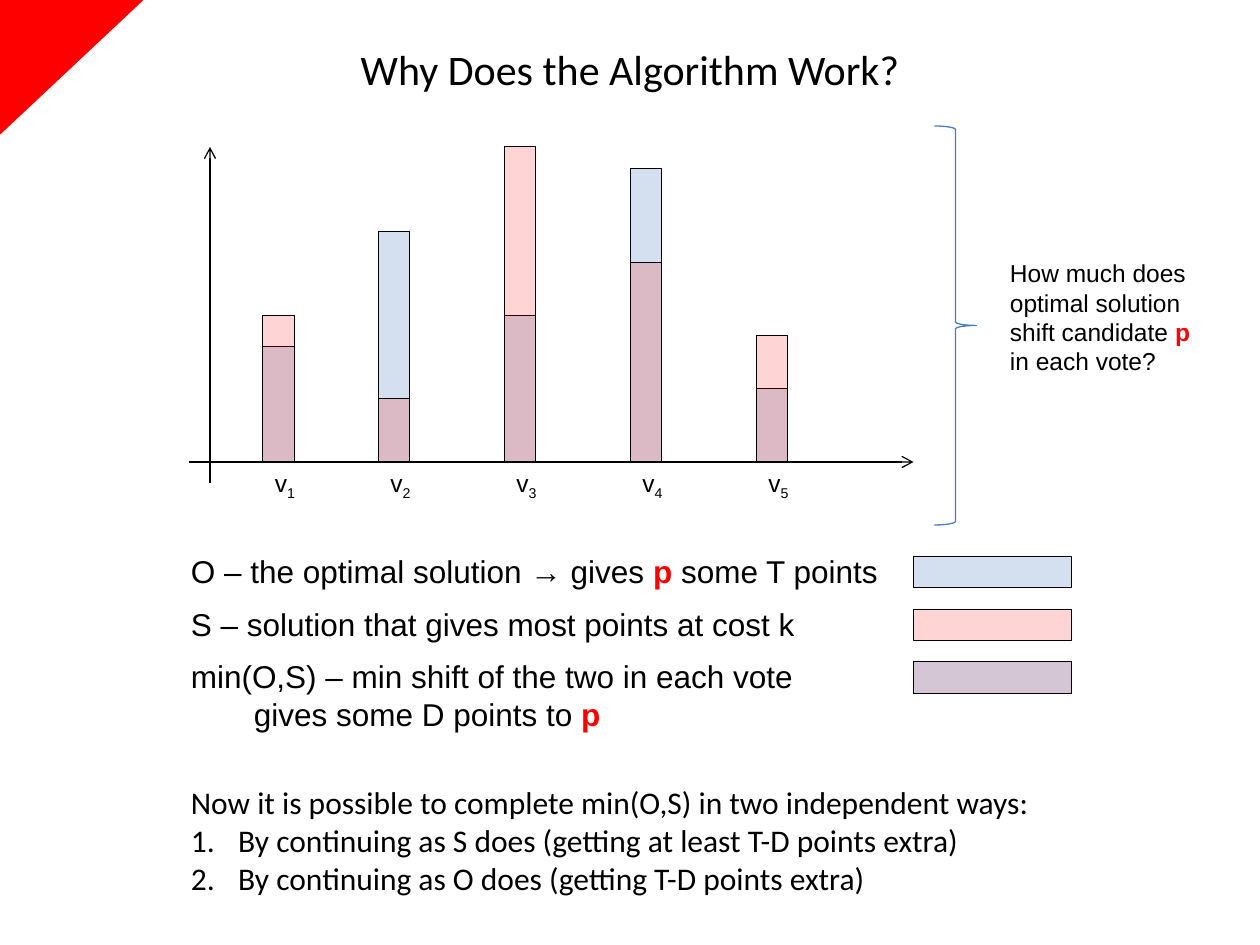
from lxml.etree import SubElement
from pptx import Presentation
from pptx.dml.color import RGBColor
from pptx.enum.shapes import MSO_CONNECTOR, MSO_SHAPE
from pptx.enum.text import MSO_ANCHOR, PP_ALIGN
from pptx.oxml.ns import qn
from pptx.util import Pt

BLACK, RED, BLUE = "000000", "FF0000", "95B3D7"
OPTIMAL = (BLUE, 40)
GREEDY = (RED, 17)
AXIS_Y = 264
BAR_WIDTH = 18
LEGEND_LEFT, LEGEND_TOP, LEGEND_STEP = 522, 318, 30
TEXT_LEFT = 102
VOTES = [(150, 66, 84), (216, 132, 36), (288, 84, 180), (360, 168, 114), (432, 42, 72)]


def paint(color_format, color):
    color_format.rgb = RGBColor.from_string(color)


def add_preset(slide, preset, left, top, width, height):
    shape = slide.shapes.add_shape(preset, Pt(left), Pt(top), Pt(width), Pt(height))
    shape.shadow.inherit = False
    return shape


def add_corner(slide):
    corner = add_preset(slide, MSO_SHAPE.RIGHT_TRIANGLE, 2.4, -2.4, 77, 82)
    corner.rotation = 90
    corner.fill.solid()
    paint(corner.fill.fore_color, RED)
    corner.line.fill.background()


def add_bar(slide, left, top, width, height, tint):
    color, opacity = tint
    bar = add_preset(slide, MSO_SHAPE.RECTANGLE, left, top, width, height)
    bar.fill.solid()
    paint(bar.fill.fore_color, color)
    srgb = bar.fill._xPr.find(".//" + qn("a:srgbClr"))
    SubElement(srgb, qn("a:alpha"), val=str(opacity * 1000))
    paint(bar.line.color, BLACK)
    bar.line.width = Pt(0.5)


def add_axis(slide, start, end):
    axis = slide.shapes.add_connector(
        MSO_CONNECTOR.STRAIGHT, *(Pt(value) for value in start + end))
    paint(axis.line.color, BLACK)
    axis.line.width = Pt(0.75)
    SubElement(axis.line._get_or_add_ln(), qn("a:tailEnd"), type="arrow")
    SubElement(axis._element.spPr, qn("a:effectLst"))


def add_brace(slide):
    brace = add_preset(slide, MSO_SHAPE.RIGHT_BRACE, 534, 72, 24, 228)
    brace.fill.background()
    paint(brace.line.color, "4B7EBC")
    brace.line.width = Pt(0.75)


def style(run, font, size, color=BLACK, bold=False):
    run.font.name = font
    run.font.size = Pt(size)
    run.font.bold = bold
    paint(run.font.color, color)


def add_text(slide, left, top, width, height, text, size, font="Arial", wrap=True):
    box = slide.shapes.add_textbox(Pt(left), Pt(top), Pt(width), Pt(height))
    frame = box.text_frame
    frame.word_wrap = wrap
    lines = text.split("\n")
    for index, line in enumerate(lines):
        paragraph = frame.add_paragraph() if index else frame.paragraphs[0]
        plain, *rest = line.split("*")
        paragraph.text = plain
        for run in paragraph.runs:
            style(run, font, size)
        for position, piece in enumerate(rest):
            if piece:
                run = paragraph.add_run()
                run.text = piece
                candidate = position % 2 == 0
                style(run, font, size, RED if candidate else BLACK, candidate)
    return frame


def add_title(slide):
    title = add_text(slide, 0, 0, 720, 78, "Why Does the Algorithm Work?", 24, "Calibri")
    title.vertical_anchor = MSO_ANCHOR.MIDDLE
    title.paragraphs[0].alignment = PP_ALIGN.CENTER


def add_vote_label(slide, left, number):
    paragraph = add_text(slide, left, AXIS_Y, 30, 24, "v", 14).paragraphs[0]
    subscript = paragraph.add_run()
    subscript.text = str(number)
    style(subscript, "Arial", 14)
    subscript._r.get_or_add_rPr().set("baseline", "-25000")


def number_paragraph(paragraph):
    properties = paragraph._p.get_or_add_pPr()
    properties.set("marL", str(Pt(27)))
    properties.set("indent", str(-Pt(27)))
    SubElement(properties, qn("a:buFont"), typeface="+mj-lt")
    SubElement(properties, qn("a:buAutoNum"), type="arabicPeriod")


def add_votes(slide):
    for left, optimal, _ in VOTES:
        add_bar(slide, left, AXIS_Y - optimal, BAR_WIDTH, optimal, OPTIMAL)
    for number, (left, _, greedy) in enumerate(VOTES, 1):
        add_bar(slide, left, AXIS_Y - greedy, BAR_WIDTH, greedy, GREEDY)
        add_vote_label(slide, left, number)


def add_legend(slide):
    entries = [
        ("O – the optimal solution → gives *p* some T points", 410, 29, False, [OPTIMAL]),
        ("S – solution that gives most points at cost k", 363, 29, False, [GREEDY]),
        ("min(O,S) – min shift of the two in each vote\v\tgives some D points to *p*",
         482, 51, True, [GREEDY, OPTIMAL]),
    ]
    for row, (text, width, height, wrap, tints) in enumerate(entries):
        top = LEGEND_TOP + row * LEGEND_STEP
        add_text(slide, TEXT_LEFT, top - 6, width, height, text, 18, wrap=wrap)
        for tint in tints:
            add_bar(slide, LEGEND_LEFT, top, 90, 18, tint)


def add_conclusion(slide):
    text = ("Now it is possible to complete min(O,S) in two independent ways:\n"
            "By continuing as S does (getting at least T-D points extra)\n"
            "By continuing as O does (getting T-D points extra)")
    conclusion = add_text(slide, TEXT_LEFT, 444, 541, 73, text, 18, "Calibri", wrap=False)
    for way in conclusion.paragraphs[1:]:
        number_paragraph(way)


def main():
    presentation = Presentation()
    presentation.slide_width, presentation.slide_height = Pt(720), Pt(540)
    slide = presentation.slides.add_slide(presentation.slide_layouts[6])
    add_corner(slide)
    add_title(slide)
    add_axis(slide, (120, 276), (120, 84))
    add_axis(slide, (108, AXIS_Y), (522, AXIS_Y))
    add_votes(slide)
    add_brace(slide)
    add_text(slide, 570, 144, 126, 75,
             "How much does optimal solution shift candidate *p* in each vote?", 14)
    add_legend(slide)
    add_conclusion(slide)
    presentation.save("out.pptx")


if __name__ == "__main__":
    main()
